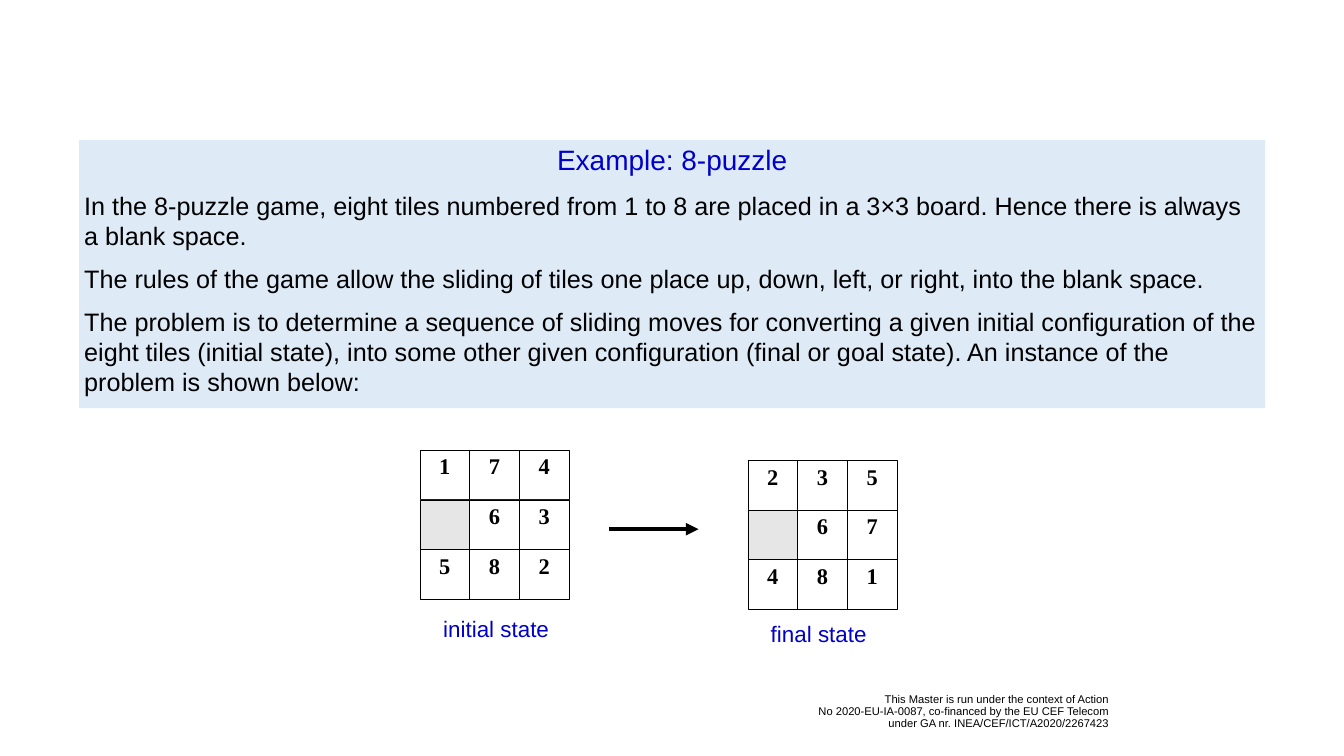
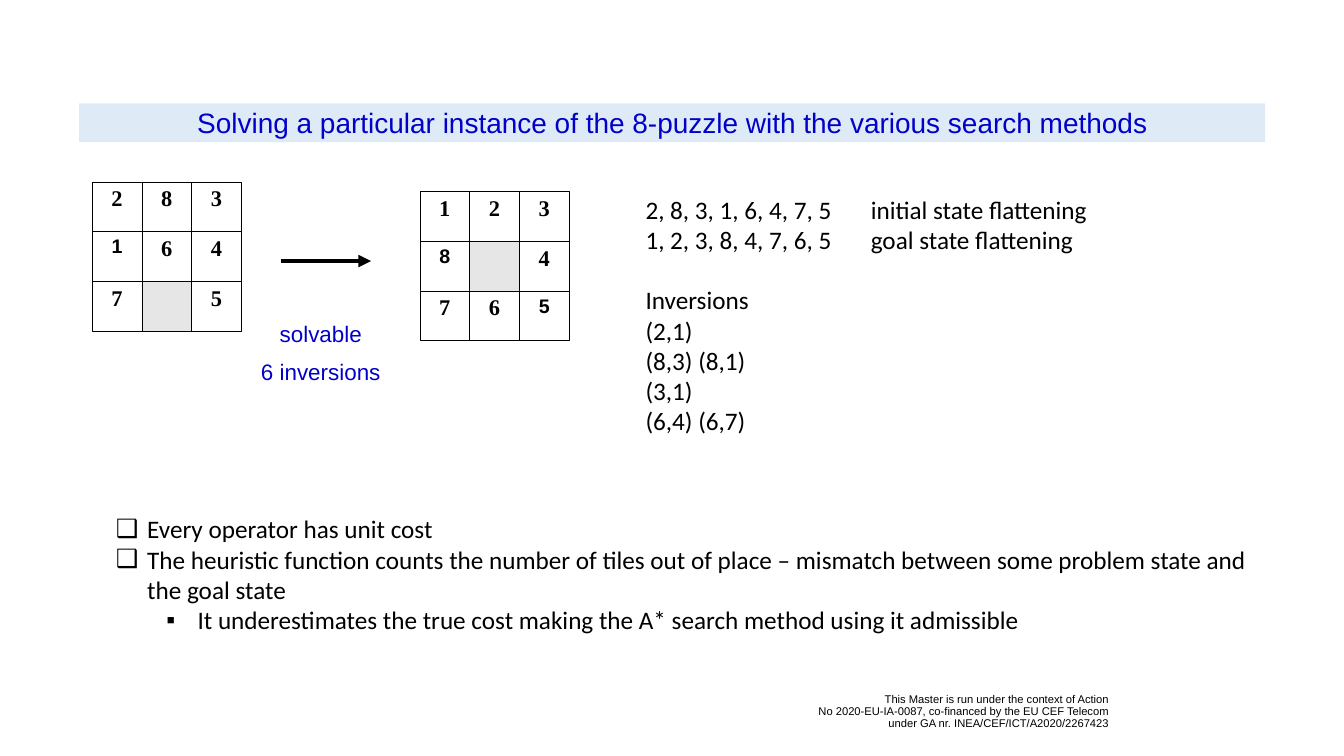
from dataclasses import dataclass

from lxml import etree
from pptx import Presentation
from pptx.dml.color import RGBColor
from pptx.enum.shapes import MSO_CONNECTOR, MSO_SHAPE
from pptx.enum.text import MSO_ANCHOR, MSO_AUTO_SIZE, PP_ALIGN
from pptx.oxml.ns import qn
from pptx.util import Inches, Pt

RECTANGLE, STRAIGHT = MSO_SHAPE.RECTANGLE, MSO_CONNECTOR.STRAIGHT
TOP, MIDDLE = MSO_ANCHOR.TOP, MSO_ANCHOR.MIDDLE
LEFT, CENTER, RIGHT = PP_ALIGN.LEFT, PP_ALIGN.CENTER, PP_ALIGN.RIGHT
NO_AUTOFIT = MSO_AUTO_SIZE.NONE
TITLE_AND_CONTENT = 1


@dataclass(frozen=True)
class Theme:
    ink: RGBColor = RGBColor(0, 0, 0)
    accent: RGBColor = RGBColor(0x01, 0x00, 0xC8)
    band: RGBColor = RGBColor(0xDE, 0xEB, 0xF7)
    tile: RGBColor = RGBColor(0xFF, 0xFF, 0xFF)
    blank: RGBColor = RGBColor(0xE7, 0xE6, 0xE6)
    sans: str = "Arial"
    notes: str = "Calibri"
    serif: str = "Times New Roman"
    title_size: int = 40
    body_size: int = 36
    label_size: int = 32
    small_tile_size: int = 28
    footer_size: int = 16
    outline: float = 0.75
    arrow: int = 6


THEME = Theme()

# The slide is a grid of 80 columns and 45 rows of square cells
WIDTH, HEIGHT = Inches(26.67), Inches(15)
COLUMNS, ROWS = 80, 45
BAND_LEFT, BAND_WIDTH, TITLE_ROWS = 4.71, 70.59, 2.31
TILE = 2.96
ARROW_LENGTH = 5.34
CAPTION_WIDTH = 14.49


def columns(count):
    return int(count * WIDTH / COLUMNS)


def rows(count):
    return int(count * HEIGHT / ROWS)


def area(left, top, width, height):
    return columns(left), rows(top), columns(width), rows(height)


def style(paragraph, font, size, color=THEME.ink, align=LEFT, before=0, bold=False):
    paragraph.alignment = align
    paragraph.space_before = Pt(before)
    paragraph.font.name = font
    paragraph.font.size = Pt(size)
    paragraph.font.color.rgb = color
    paragraph.font.bold = bold


def write(frame, lines):
    """Fill a frame with one paragraph per line and return the paragraphs."""
    frame.word_wrap = True
    frame.auto_size = NO_AUTOFIT
    frame.vertical_anchor = TOP
    frame.text = "\n".join(lines)
    return frame.paragraphs


def text_box(slide, place, lines):
    return write(slide.shapes.add_textbox(*area(*place)).text_frame, lines)


def move(placeholder, place):
    placeholder.left, placeholder.top, placeholder.width, placeholder.height = area(*place)


def fill(shape, color):
    shape.fill.solid()
    shape.fill.fore_color.rgb = color


def set_bullet(paragraph, symbol=None, margin=0, hanging=0):
    properties = paragraph._p.get_or_add_pPr()
    properties.set("marL", str(columns(margin)))
    properties.set("indent", str(-columns(hanging)))
    if symbol:
        etree.SubElement(properties, qn("a:buChar")).set("char", symbol)
    else:
        etree.SubElement(properties, qn("a:buNone"))


def add_title(slide, top, text):
    title = slide.shapes.title
    move(title, (BAND_LEFT, top, BAND_WIDTH, TITLE_ROWS))
    fill(title, THEME.band)
    heading = write(title.text_frame, [text])[0]
    style(heading, THEME.sans, THEME.title_size, THEME.accent, CENTER)


def add_board(slide, left, top, layout, small=""):
    """Draw a 3 by 3 board; a space in the layout is the blank square."""
    for row, digits in enumerate(layout.split("/")):
        for column, digit in enumerate(digits):
            place = area(left + column * TILE, top + row * TILE, TILE, TILE)
            tile = slide.shapes.add_shape(RECTANGLE, *place)
            tile.shadow.inherit = False
            tile.line.color.rgb = THEME.ink
            tile.line.width = Pt(THEME.outline)
            fill(tile, THEME.blank if digit == " " else THEME.tile)
            if digit == " ":
                continue
            font, size = ((THEME.sans, THEME.small_tile_size) if digit in small
                          else (THEME.serif, THEME.label_size))
            number = write(tile.text_frame, [digit])[0]
            style(number, font, size, align=CENTER, bold=True)


def add_arrow(slide, left, top):
    arrow = slide.shapes.add_connector(
        STRAIGHT, columns(left), rows(top), columns(left + ARROW_LENGTH), rows(top))
    arrow.line.color.rgb = THEME.ink
    arrow.line.width = Pt(THEME.arrow)
    etree.SubElement(arrow.line._get_or_add_ln(), qn("a:tailEnd")).set("type", "triangle")
    etree.SubElement(arrow._element.spPr, qn("a:effectLst"))


def add_caption(slide, left, top, lines):
    place = (left, top, CAPTION_WIDTH, 2 * len(lines))
    for index, line in enumerate(text_box(slide, place, lines)):
        style(line, THEME.sans, THEME.label_size, THEME.accent, CENTER, 16 if index else 0)


def add_footer(presentation, slide):
    """Build the funding note once and place it on the slide master."""
    box = slide.shapes.add_textbox(*area(45.06, 41.22, 21.24, 2.28))
    note = write(box.text_frame, [""])[0]
    note.text = ("This Master is run under the context of Action\n"
                 "No 2020-EU-IA-0087, co-financed by the EU CEF Telecom\n"
                 "under GA nr. INEA/CEF/ICT/A2020/2267423")
    box.text_frame.vertical_anchor = MIDDLE
    note.line_spacing = 0.9
    style(note, THEME.sans, THEME.footer_size, align=RIGHT)
    presentation.slide_master.shapes._spTree.append(box._element)


def build_example(slide):
    add_title(slide, 8.34, "Example: 8-puzzle")

    # Rules of the game, continuing the title band
    rules = slide.placeholders[1]
    move(rules, (BAND_LEFT, 8.34 + TITLE_ROWS, BAND_WIDTH, 13.65))
    fill(rules, THEME.band)
    rules.text_frame.margin_top = rows(0.66)
    paragraphs = write(rules.text_frame, [
        "In the 8-puzzle game, eight tiles numbered from 1 to 8 are placed in a 3×3 board. "
        "Hence there is always a blank space.",
        "The rules of the game allow the sliding of tiles one place up, down, left, or right, "
        "into the blank space.",
        "The problem is to determine a sequence of sliding moves for converting a given initial "
        "configuration of the eight tiles (initial state), into some other given configuration "
        "(final or goal state). An instance of the problem is shown below:",
    ])
    for index, paragraph in enumerate(paragraphs):
        set_bullet(paragraph)
        style(paragraph, THEME.sans, THEME.body_size, before=18 if index else 0)

    # Initial and final states
    add_board(slide, 25, 26.79, "174/ 63/582")
    add_arrow(slide, 36.24, 31.5)
    add_board(slide, 44.52, 27.39, "235/ 67/481")
    add_caption(slide, 22.29, 36.45, ["initial state"])
    add_caption(slide, 41.49, 36.78, ["final state"])


def build_instance(slide):
    add_title(slide, 6.15,
              "Solving a particular instance of the 8-puzzle with the various search methods")

    # Start and goal boards
    add_board(slide, 5.49, 10.83, "283/164/7 5", small="1")
    add_arrow(slide, 16.74, 15.54)
    add_board(slide, 25, 11.4, "123/8 4/765", small="85")
    add_caption(slide, 11.85, 18.93, ["solvable", "6 inversions"])

    # Flattened states and their inversions
    inversions = text_box(slide, (38.13, 11.4, 30.45, 14.85), [
        "2, 8, 3, 1, 6, 4, 7, 5\tinitial state flattening",
        "1, 2, 3, 8, 4, 7, 6, 5\tgoal state flattening",
        "Inversions", "(2,1)", "(8,3) (8,1)", "(3,1)", "(6,4) (6,7)",
    ])
    for line in inversions:
        if "\t" in line.text:
            stops = etree.SubElement(line._p.get_or_add_pPr(), qn("a:tabLst"))
            etree.SubElement(stops, qn("a:tab"), pos=str(columns(13.41)), algn="l")
        style(line, THEME.notes, THEME.body_size, before=43 if line.text == "Inversions" else 0)

    # Remarks on cost and heuristic
    remarks = [
        (0, "Every operator has unit cost"),
        (0, "The heuristic function counts the number of tiles out of place – mismatch between "
            "some problem state and the goal state"),
        (1, "It underestimates the true cost making the A* search method using it admissible"),
    ]
    body = slide.placeholders[1]
    move(body, (6.6, 30.42, 68.07, 7.56))
    paragraphs = write(body.text_frame, [text for _, text in remarks])
    for paragraph, (level, _) in zip(paragraphs, remarks):
        paragraph.level = level
        set_bullet(paragraph, "❑▪"[level], 1.86 + 3 * level, 1.86)
        style(paragraph, THEME.notes, THEME.body_size)


def main():
    presentation = Presentation()
    presentation.slide_width, presentation.slide_height = WIDTH, HEIGHT
    layout = presentation.slide_layouts[TITLE_AND_CONTENT]
    example, instance = (presentation.slides.add_slide(layout) for _ in range(2))
    add_footer(presentation, example)
    build_example(example)
    build_instance(instance)
    presentation.save("out.pptx")


if __name__ == "__main__":
    main()
